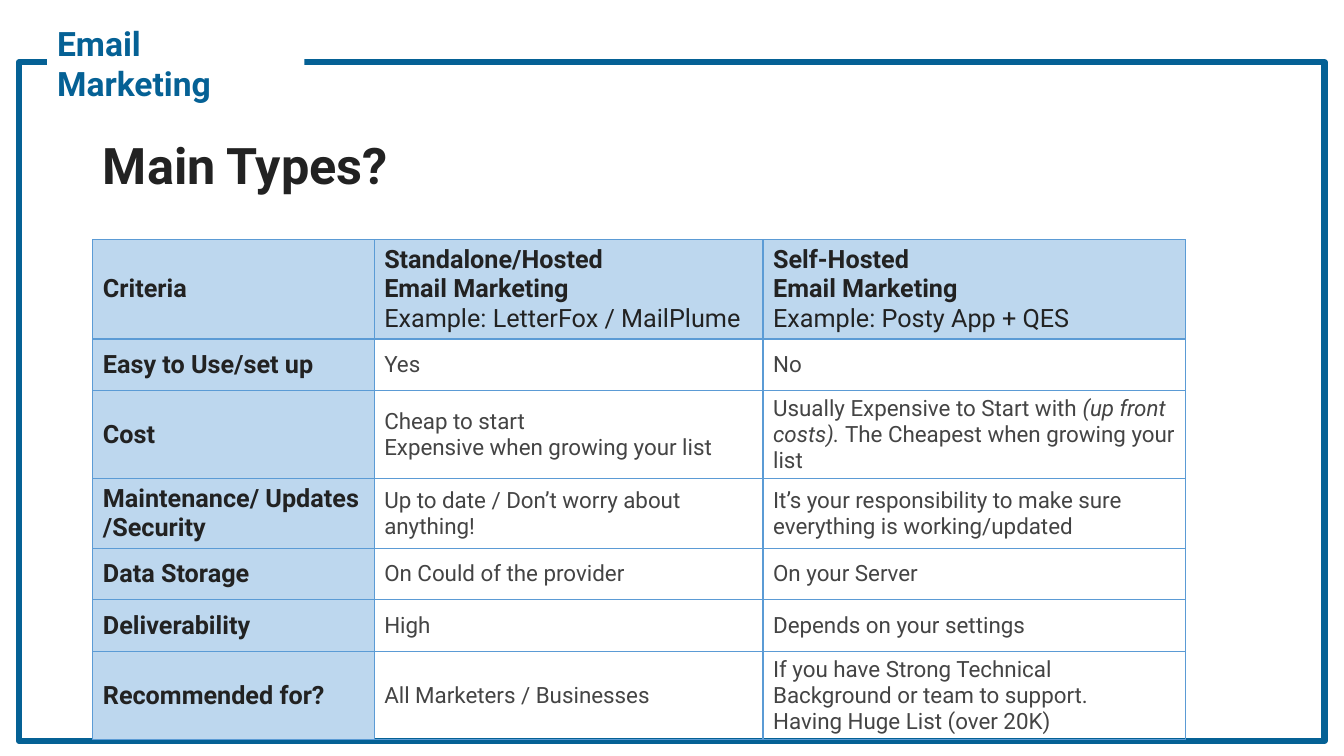
"""Build the slide that compares hosted and self-hosted email marketing."""
from lxml.etree import SubElement
from pptx import Presentation
from pptx.dml.color import RGBColor
from pptx.enum.shapes import MSO_SHAPE
from pptx.enum.text import MSO_ANCHOR, PP_ALIGN
from pptx.oxml.ns import qn
from pptx.util import Cm, Pt

BLUE = RGBColor(0x05, 0x61, 0x95)
PALE = RGBColor(0xBD, 0xD7, 0xEE)
WHITE = RGBColor(0xFF, 0xFF, 0xFF)
DARK = RGBColor(0x22, 0x22, 0x22)
GREY = RGBColor(0x44, 0x44, 0x44)
EDGE = RGBColor(0x5B, 0x9B, 0xD5)

HEADS = [
    ("Criteria", ""),
    ("Standalone/Hosted\nEmail Marketing", "Example: LetterFox / MailPlume"),
    ("Self-Hosted\nEmail Marketing", "Example: Posty App + QES"),
]
ROWS = [
    ("Easy to Use/set up", "Yes", "No"),
    ("Cost", "Cheap to start\nExpensive when growing your list",
     "Usually Expensive to Start with *(up front costs). *The Cheapest when growing your list"),
    ("Maintenance/ Updates /Security", "Up to date / Don’t worry about anything!",
     "It’s your responsibility to make sure everything is working/updated"),
    ("Data Storage", "On Could of the provider", "On your Server"),
    ("Deliverability", "High", "Depends on your settings"),
    ("Recommended for?", "All Marketers / Businesses",
     "If you have Strong Technical Background or team to support.\nHaving Huge List (over 20K)"),
]
WIDTHS = [7.09, 9.8, 10.64]
HEIGHTS = [2.5, 1.3, 2.2, 1.75, 1.3, 1.3, 2.2]


def write(para, text, size, color, bold=True, slant=False):
    for i, line in enumerate(text.split("\n")):
        if i:
            para.add_line_break()
        run = para.add_run()
        run.text = line
        font = run.font
        font.name, font.size = "Roboto", Pt(size)
        font.bold, font.italic = bold, slant
        font.color.rgb = color


def style(cell, shade):
    cell.vertical_anchor = MSO_ANCHOR.MIDDLE
    props = cell._tc.get_or_add_tcPr()
    for side in ("L", "R", "T", "B"):
        line = SubElement(props, qn("a:ln" + side), w=str(Pt(1)))
        fill = SubElement(line, qn("a:solidFill"))
        SubElement(fill, qn("a:srgbClr"), val=str(EDGE))
    if shade:
        cell.fill.solid()
        cell.fill.fore_color.rgb = PALE
    else:
        cell.fill.background()


deck = Presentation()
deck.slide_width, deck.slide_height = Cm(33.87), Cm(19.05)
slide = deck.slides.add_slide(deck.slide_layouts[5])
shapes = slide.shapes

title = shapes.title
title.left, title.top, title.width, title.height = Cm(2.34), Cm(3.2), Cm(29.2), Cm(2.06)
title.text_frame.vertical_anchor = MSO_ANCHOR.MIDDLE
para = title.text_frame.paragraphs[0]
para.alignment = PP_ALIGN.LEFT
para.line_spacing = 0.9
write(para, "Main Types?", 36, DARK)

frame = shapes.add_shape(MSO_SHAPE.RECTANGLE, Cm(0.48), Cm(1.57), Cm(32.9), Cm(17.1))
frame.shadow.inherit = False
frame.fill.background()
frame.line.color.rgb = BLUE
frame.line.width = Pt(4.5)

table = shapes.add_table(len(HEIGHTS), len(WIDTHS), Cm(2.34), Cm(6.04),
                         Cm(sum(WIDTHS)), Cm(sum(HEIGHTS))).table
table.first_row = table.horz_banding = False
for col, width in zip(table.columns, WIDTHS):
    col.width = Cm(width)
for row, height in zip(table.rows, HEIGHTS):
    row.height = Cm(height)

for c, (name, sample) in enumerate(HEADS):
    cell = table.cell(0, c)
    style(cell, True)
    write(cell.text_frame.paragraphs[0], name, 18, DARK)
    if sample:
        write(cell.text_frame.add_paragraph(), sample, 18, DARK, False)

for r, row in enumerate(ROWS, 1):
    for c, text in enumerate(row):
        cell = table.cell(r, c)
        style(cell, c == 0)
        size, color = (16, GREY) if c else (18, DARK)
        for i, part in enumerate(text.split("\n")):
            body = cell.text_frame
            para = body.add_paragraph() if i else body.paragraphs[0]
            for n, piece in enumerate(part.split("*")):
                write(para, piece, size, color, c == 0, n % 2 == 1)

label = shapes.add_shape(MSO_SHAPE.RECTANGLE, Cm(1.19), Cm(0.86), Cm(6.48), Cm(1.45))
label.shadow.inherit = False
label.fill.solid()
label.fill.fore_color.rgb = WHITE
label.line.fill.background()
body = label.text_frame
body.word_wrap = True
body.vertical_anchor = MSO_ANCHOR.MIDDLE
body.margin_left = body.margin_right = body.margin_top = body.margin_bottom = Cm(0.25)
body.paragraphs[0].alignment = PP_ALIGN.LEFT
write(body.paragraphs[0], "Email Marketing", 24, BLUE)

deck.save("out.pptx")
